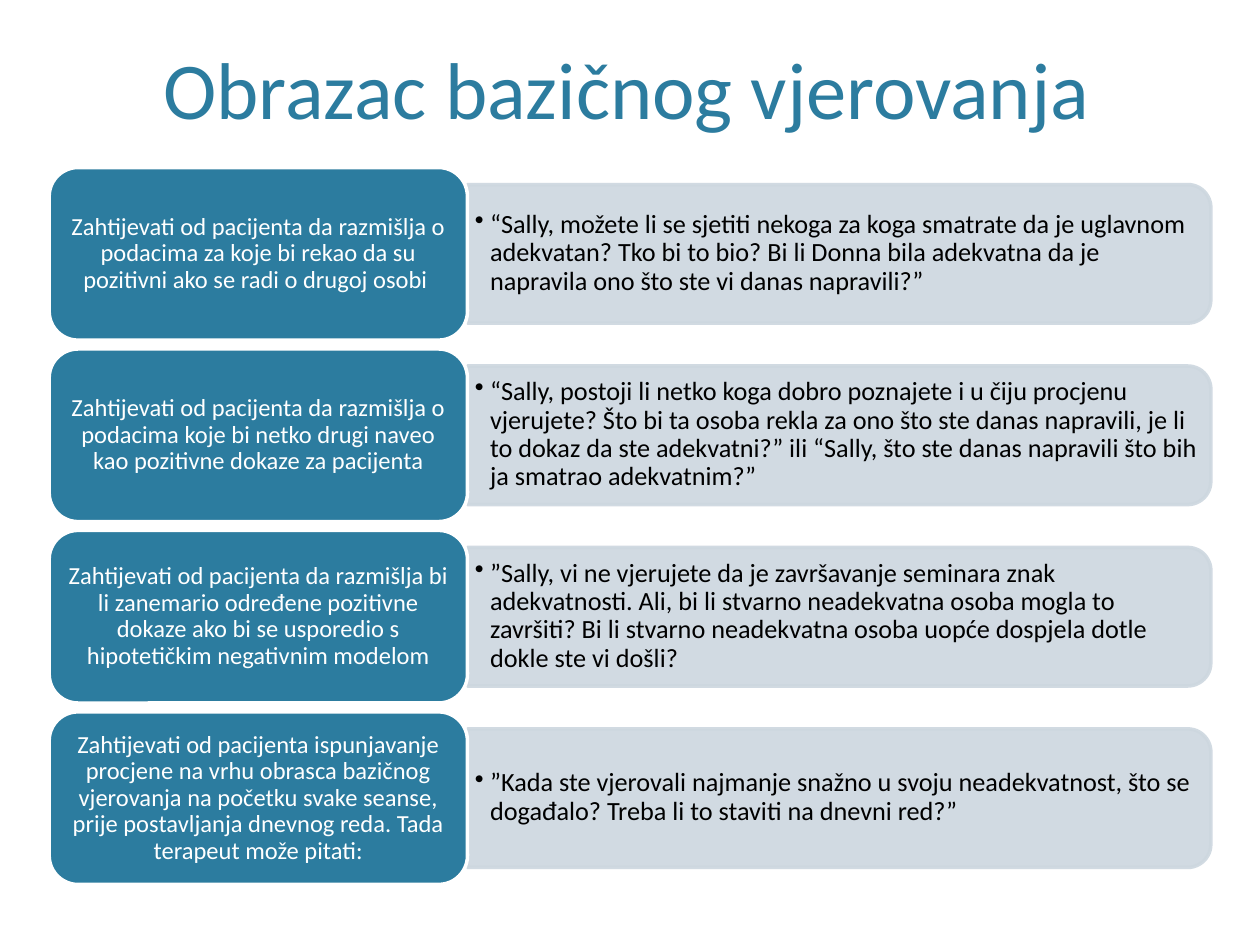
from dataclasses import dataclass
from lxml import etree
from pptx import Presentation, util as u
from pptx.dml.color import RGBColor
from pptx.enum import shapes, text
from pptx.oxml.ns import qn


@dataclass(frozen=True)
class Theme:
    font: str = "Calibri"
    teal: str = "2C7C9F"
    pale: str = "CDD7DF"
    white: str = "FFFFFF"
    black: str = "000000"
    head: int = 46
    label: int = 14
    quote: int = 15


THEME = Theme()
TOP, STEP = 1.33, 1.44
LEFT, WIDE, HIGH = 0.39, 3.32, 1.37
BAR, THICK = 5.9, 1.1
ROWS = [
    ("Zahtijevati od pacijenta da razmišlja o podacima za koje bi rekao da su pozitivni ako se radi o drugoj osobi ",
     "“Sally, možete li se sjetiti nekoga za koga smatrate da je uglavnom adekvatan? Tko bi to bio? Bi li Donna bila adekvatna da je napravila ono što ste vi danas napravili?”"),
    ("Zahtijevati od pacijenta da razmišlja o podacima koje bi netko drugi naveo kao pozitivne dokaze za pacijenta",
     "“Sally, postoji li netko koga dobro poznajete i u čiju procjenu vjerujete? Što bi ta osoba rekla za ono što ste danas napravili, je li to dokaz da ste adekvatni?” ili “Sally, što ste danas napravili što bih ja smatrao adekvatnim?”"),
    ("Zahtijevati od pacijenta da razmišlja bi li zanemario određene pozitivne dokaze ako bi se usporedio s hipotetičkim negativnim modelom",
     "”Sally, vi ne vjerujete da je završavanje seminara znak adekvatnosti. Ali, bi li stvarno neadekvatna osoba mogla to završiti? Bi li stvarno neadekvatna osoba uopće dospjela dotle dokle ste vi došli?"),
    ("Zahtijevati od pacijenta ispunjavanje procjene na vrhu obrasca bazičnog vjerovanja na početku svake seanse, prije postavljanja dnevnog reda. Tada terapeut može pitati:",
     "”Kada ste vjerovali najmanje snažno u svoju neadekvatnost, što se događalo? Treba li to staviti na dnevni red?”"),
]


def apply(obj, **values):
    for name, value in values.items():
        setattr(obj, name, value)


def box(*sides):
    return [u.Inches(side) for side in sides]


def write(shape, words, size, color, align, anchor=text.MSO_ANCHOR.MIDDLE):
    frame = shape.text_frame
    apply(frame, text=words, word_wrap=True, vertical_anchor=anchor,
          auto_size=text.MSO_AUTO_SIZE.NONE,
          margin_left=u.Inches(0.06), margin_right=u.Inches(0.06),
          margin_top=u.Inches(0.03), margin_bottom=u.Inches(0.03))
    para = frame.paragraphs[0]
    apply(para, alignment=align, line_spacing=0.9)
    font = para.runs[0].font
    apply(font, name=THEME.font, size=u.Pt(size))
    font.color.rgb = RGBColor.from_string(color)
    return para


def add_form(slide, kind, place, fill, edge):
    shape = slide.shapes.add_shape(kind, *box(*place))
    shape.shadow.inherit = False
    shape.fill.solid()
    shape.fill.fore_color.rgb = RGBColor.from_string(fill)
    shape.line.color.rgb = RGBColor.from_string(edge)
    shape.line.width = u.Pt(2)
    return shape


def add_bar(slide, mid):
    left = LEFT + WIDE + (BAR - THICK) / 2
    place = (left, mid - BAR / 2, THICK, BAR)
    bar = add_form(slide, shapes.MSO_SHAPE.ROUND_2_SAME_RECTANGLE,
                   place, THEME.pale, THEME.pale)
    bar.rotation = 90
    for color in bar._element.spPr.iter(qn("a:srgbClr")):
        etree.SubElement(color, qn("a:alpha"), val="90000")


def add_quote(slide, mid, words):
    area = slide.shapes.add_textbox(*box(LEFT + WIDE, mid - 0.5, 5.85, 0.99))
    para = write(area, words, THEME.quote, THEME.black, text.PP_ALIGN.LEFT)
    props = para._p.get_or_add_pPr()
    props.set("marL", str(u.Inches(0.12)))
    props.set("indent", str(u.Inches(-0.12)))
    etree.SubElement(props, qn("a:buChar"), char="•")


def add_label(slide, top, words):
    label = add_form(slide, shapes.MSO_SHAPE.ROUNDED_RECTANGLE,
                     (LEFT, top, WIDE, HIGH), THEME.teal, THEME.white)
    write(label, words, THEME.label, THEME.white, text.PP_ALIGN.CENTER)


def add_title(slide, words):
    title = slide.shapes.title
    for name, value in zip(("left", "top", "width", "height"),
                           box(0.7, 0.23, 8.54, 0.88)):
        setattr(title, name, value)
    para = write(title, words, THEME.head, THEME.teal,
                 text.PP_ALIGN.CENTER, text.MSO_ANCHOR.BOTTOM)
    para.line_spacing = 1.0


def main():
    deck = Presentation()
    apply(deck, slide_width=u.Inches(10), slide_height=u.Inches(7.5))
    slide = deck.slides.add_slide(deck.slide_layouts[5])
    add_title(slide, "Obrazac bazičnog vjerovanja")
    for row, (label, quote) in enumerate(ROWS):
        top = TOP + row * STEP
        mid = top + HIGH / 2
        add_bar(slide, mid)
        add_quote(slide, mid, quote)
        add_label(slide, top, label)
    deck.save("out.pptx")


if __name__ == "__main__":
    main()
